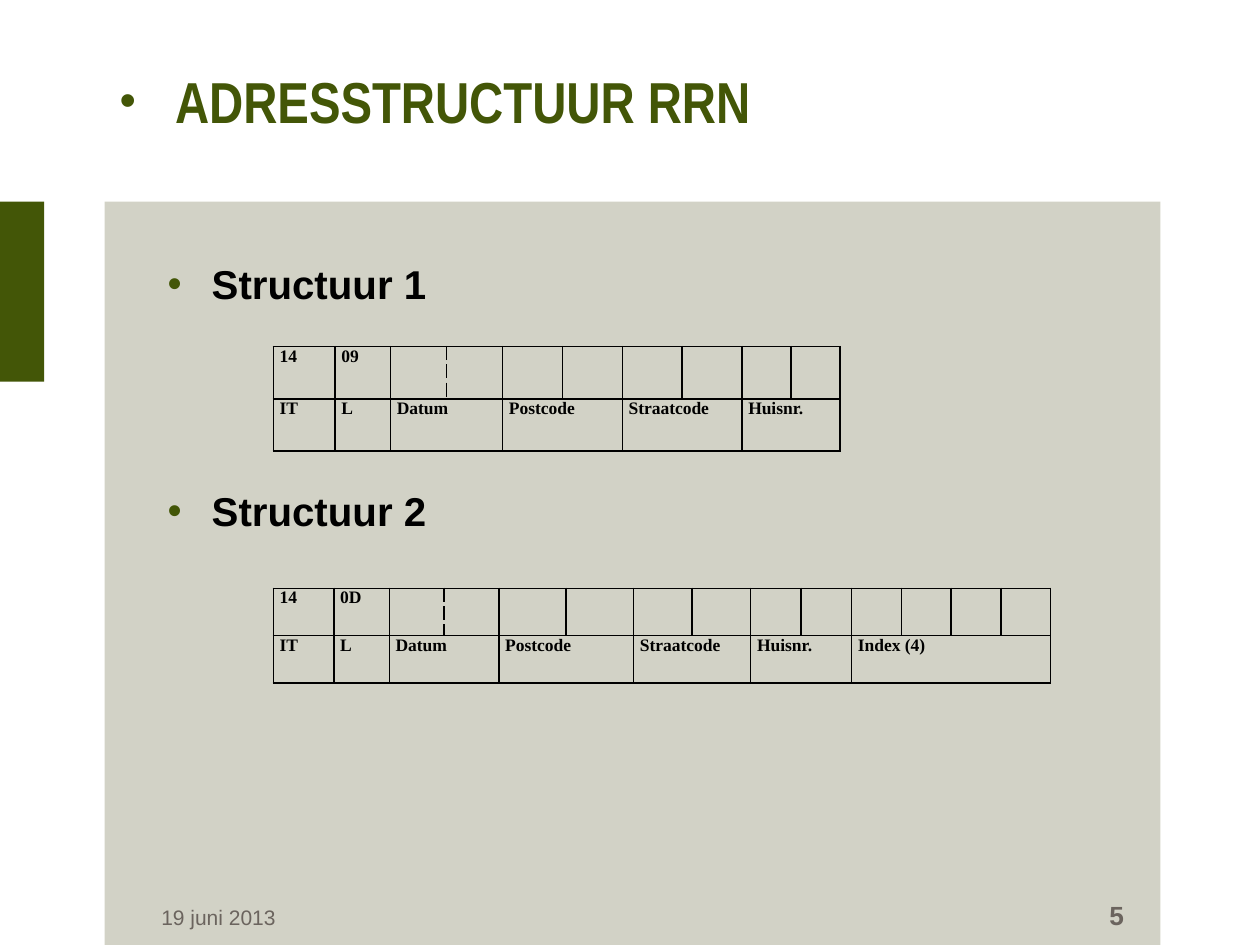
from dataclasses import dataclass

from lxml.etree import SubElement
from pptx import Presentation
from pptx.dml.color import RGBColor
from pptx.enum.shapes import MSO_SHAPE
from pptx.enum.text import MSO_ANCHOR, PP_ALIGN
from pptx.oxml.ns import qn
from pptx.util import Inches, Pt

# Slide grid: 100 columns by 75 rows of square cells
COLS, ROWS = 100, 75
SLIDE_W, SLIDE_H = Inches(10), Inches(7.5)
GREEN, PANEL, GREY, BLACK = "435607", "D2D2C6", "6B645E", "000000"


@dataclass
class Box:
    col: float
    row: float
    cols: float
    rows: float

    def emu(self) -> tuple:
        return (gx(self.col), gy(self.row), gx(self.cols), gy(self.rows))


@dataclass
class Font:
    name: str
    size: float
    color: str
    bold: bool = False


@dataclass
class Field:
    label: str
    width: float
    slots: int = 1
    value: str = ""
    dashed: bool = False


@dataclass
class Record:
    box: Box
    fields: list


def gx(cols: float) -> int:
    return round(SLIDE_W * cols / COLS)


def gy(rows: float) -> int:
    return round(SLIDE_H * rows / ROWS)


def rgb(color: str) -> RGBColor:
    return RGBColor.from_string(color)


def add_rect(s, box: Box, color: str):
    sp = s.shapes.add_shape(MSO_SHAPE.RECTANGLE, *box.emu())
    sp.shadow.inherit = False
    sp.fill.solid()
    sp.fill.fore_color.rgb = rgb(color)
    sp.line.fill.background()
    return sp


def prepare_frame(sp, anchor=MSO_ANCHOR.TOP):
    tf = sp.text_frame
    tf.word_wrap = True
    tf.vertical_anchor = anchor
    tf.margin_left = tf.margin_right = tf.margin_top = tf.margin_bottom = 0
    return tf


def add_run(p, text: str, font: Font) -> None:
    r = p.add_run()
    r.text = text
    r.font.name = font.name
    r.font.size = Pt(font.size)
    r.font.bold = font.bold
    r.font.color.rgb = rgb(font.color)


def add_bullet(p, indent: float, color: str, percent: int = 100) -> None:
    pPr = p._p.get_or_add_pPr()
    pPr.set("marL", str(gx(indent)))
    pPr.set("indent", str(-gx(indent)))
    clr = SubElement(pPr, qn("a:buClr"))
    SubElement(clr, qn("a:srgbClr"), val=color)
    SubElement(pPr, qn("a:buSzPct"), val=str(percent * 1000))
    SubElement(pPr, qn("a:buFont"), typeface="Arial")
    SubElement(pPr, qn("a:buChar"), char="•")


def add_label(s, box: Box, text: str, font: Font, align=PP_ALIGN.LEFT) -> None:
    p = prepare_frame(s.shapes.add_textbox(*box.emu())).paragraphs[0]
    p.alignment = align
    add_run(p, text, font)


def style_cell(cell, dashed_sides: str = "") -> None:
    cell.margin_left = cell.margin_right = gx(0.5)
    cell.margin_top = cell.margin_bottom = 0
    tcPr = cell._tc.get_or_add_tcPr()
    for side in "LRTB":
        ln = SubElement(tcPr, qn(f"a:ln{side}"), w=str(Pt(1)))
        fill = SubElement(ln, qn("a:solidFill"))
        SubElement(fill, qn("a:srgbClr"), val=BLACK)
        dash = "dash" if side in dashed_sides else "solid"
        SubElement(ln, qn("a:prstDash"), val=dash)
    cell.fill.background()


def add_record(s, record: Record, font: Font) -> None:
    count = sum(f.slots for f in record.fields)
    table = s.shapes.add_table(2, count, *record.box.emu()).table
    table.first_row = table.horz_banding = False
    for row in table.rows:
        row.height = gy(record.box.rows / 2)

    start = 0
    for f in record.fields:
        last = start + f.slots - 1
        for c in range(start, last + 1):
            table.columns[c].width = gx(f.width / f.slots)
            inner = ("L" if c > start else "") + ("R" if c < last else "")
            style_cell(table.cell(0, c), inner if f.dashed else "")
            style_cell(table.cell(1, c))
        if f.slots > 1:
            table.cell(1, start).merge(table.cell(1, last))
        for r, text in enumerate((f.value, f.label)):
            if text:
                p = table.cell(r, start).text_frame.paragraphs[0]
                add_run(p, text, font)
        start = last + 1


RECORDS = [
    Record(Box(21.7, 27.5, 45, 8.3), [
        Field("IT", 4.9, value="14"),
        Field("L", 4.4, value="09"),
        Field("Datum", 8.9, 2, dashed=True),
        Field("Postcode", 9.5, 2),
        Field("Straatcode", 9.5, 2),
        Field("Huisnr.", 7.8, 2),
    ]),
    Record(Box(21.7, 46.7, 61.7, 7.5), [
        Field("IT", 4.8, value="14"),
        Field("L", 4.4, value="0D"),
        Field("Datum", 8.7, 2, dashed=True),
        Field("Postcode", 10.7, 2),
        Field("Straatcode", 9.3, 2),
        Field("Huisnr.", 8, 2),
        Field("Index (4)", 15.8, 4),
    ]),
]


def main() -> None:
    prs = Presentation()
    prs.slide_width, prs.slide_height = SLIDE_W, SLIDE_H
    s = prs.slides.add_slide(prs.slide_layouts[6])

    # Background panel and side accent
    add_rect(s, Box(8.3, 16, 83.8, 59), PANEL)
    add_rect(s, Box(0, 16, 3.5, 14.3), GREEN)

    # Title
    title = s.shapes.add_textbox(*Box(9.5, 2.6, 82.6, 10.7).emu())
    p = prepare_frame(title, MSO_ANCHOR.MIDDLE).paragraphs[0]
    add_bullet(p, 4.4, GREEN, 81)
    add_run(p, "ADRESSTRUCTUUR RRN", Font("Arial Narrow", 33, GREEN, True))

    # Headings, spaced to leave room for the first table
    tf = prepare_frame(add_rect(s, Box(13.3, 20.5, 74.2, 45), PANEL))
    for i, text in enumerate(("Structuur 1", "Structuur 2")):
        p = tf.add_paragraph() if i else tf.paragraphs[0]
        p.alignment = PP_ALIGN.LEFT
        p.line_spacing = Pt(28)
        if i:
            p.space_before = Pt(102)
        add_bullet(p, 3.5, GREEN)
        add_run(p, text, Font("Arial", 23, BLACK, True))

    # Record layouts
    for record in RECORDS:
        add_record(s, record, Font("Times New Roman", 10, BLACK, True))

    # Footer
    add_label(s, Box(12.8, 71.8, 20.8, 2.6), "19 juni 2013", Font("Arial", 12, GREY))
    add_label(s, Box(80.9, 71.4, 8.3, 2.6), "5", Font("Arial", 15, GREY, True),
              PP_ALIGN.RIGHT)

    prs.save("out.pptx")


if __name__ == "__main__":
    main()
